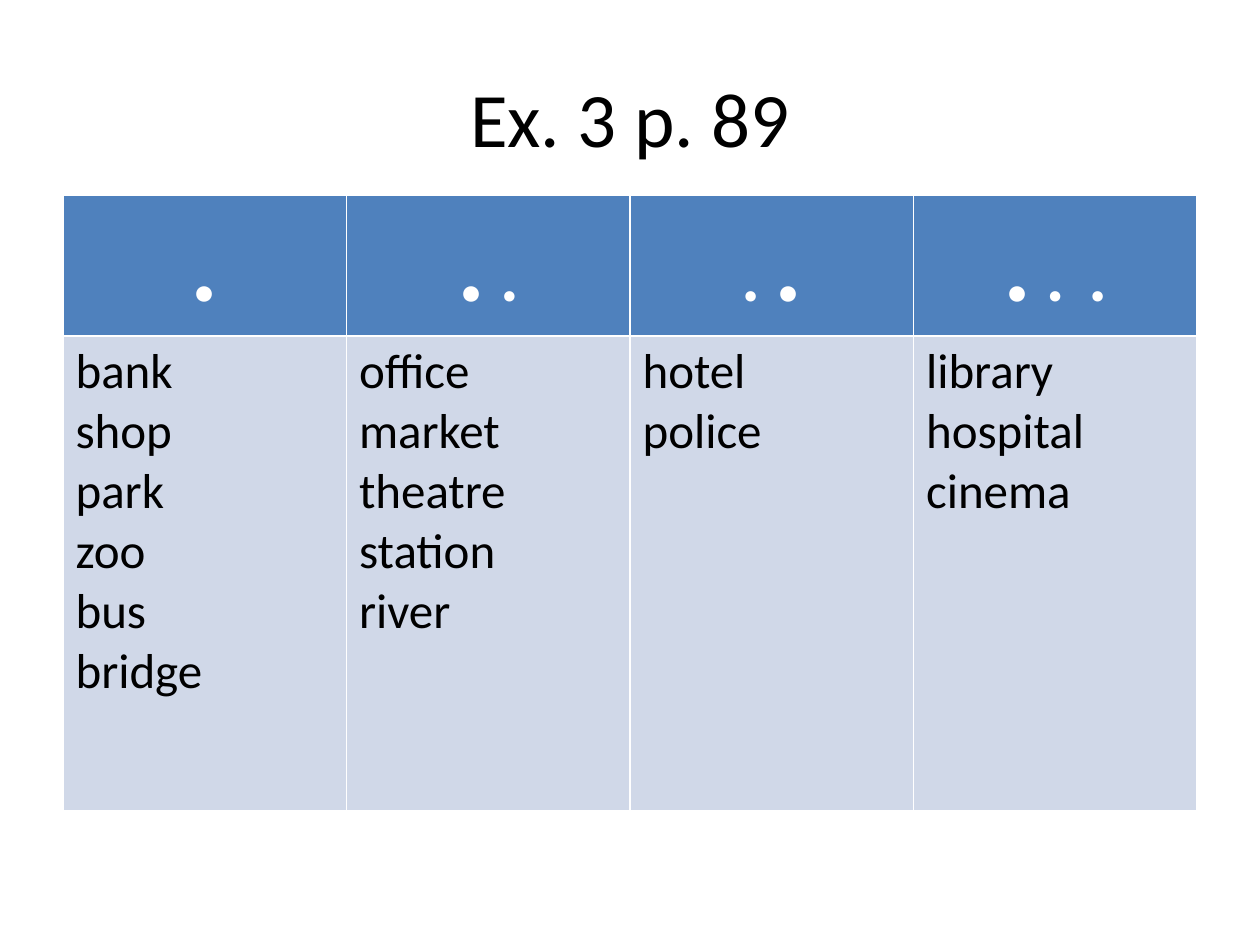
from pptx import Presentation
from pptx.dml.color import RGBColor
from pptx.enum.text import MSO_ANCHOR, PP_ALIGN
from pptx.util import Inches, Pt

FONT = "Calibri"
BLACK, WHITE, BLUE, PALE = "000000", "FFFFFF", "4F81BD", "D0D8E8"
BIG, SMALL, GAP, WIDE_GAP = 60, 40, 36, 60  # stress dots and the spaces between

# Each stress pattern (text, size) with the words that follow it
STRESS_GROUPS = [
    ([(".", BIG)], ["bank", "shop", "park", "zoo", "bus", "bridge"]),
    ([(".", BIG), (" ", GAP), (".", SMALL)],
     ["office", "market", "theatre", "station", "river"]),
    ([(".", SMALL), (" ", GAP), (".", BIG)], ["hotel", "police"]),
    ([(".", BIG), (" ", GAP), (".", SMALL), (" ", WIDE_GAP), (".", SMALL)],
     ["library", "hospital", "cinema"]),
]


def color(hex_value):
    return RGBColor.from_string(hex_value)


def add_run(paragraph, text, size, ink, bold=False):
    run = paragraph.add_run()
    run.text = text
    run.font.name = FONT
    run.font.size = Pt(size)
    run.font.bold = bold
    run.font.color.rgb = color(ink)


def fill_cell(cell, fill, lines, ink, bold=False, align=PP_ALIGN.LEFT):
    """Fill a cell with lines, each a list of (text, size) runs."""
    cell.fill.solid()
    cell.fill.fore_color.rgb = color(fill)
    frame = cell.text_frame
    for index, line in enumerate(lines):
        paragraph = frame.add_paragraph() if index else frame.paragraphs[0]
        paragraph.alignment = align
        for text, size in line:
            add_run(paragraph, text, size, ink, bold)


def place_title(slide, left, top, width, height):
    title = slide.shapes.title
    title.left, title.top, title.width, title.height = left, top, width, height
    title.text_frame.vertical_anchor = MSO_ANCHOR.MIDDLE
    paragraph = title.text_frame.paragraphs[0]
    paragraph.alignment = PP_ALIGN.CENTER
    add_run(paragraph, "Ex. 3 p. 89", 44, BLACK)


def place_stress_table(slide, left, top, width, height):
    # The default table style supplies the white rules between cells
    table = slide.shapes.add_table(
        2, len(STRESS_GROUPS), left, top, width, height).table
    header_height = Inches(1.1)
    table.rows[0].height = header_height
    table.rows[1].height = height - header_height
    for column, (pattern, words) in enumerate(STRESS_GROUPS):
        fill_cell(table.cell(0, column), BLUE, [pattern], WHITE,
                  bold=True, align=PP_ALIGN.CENTER)
        fill_cell(table.cell(1, column), PALE,
                  [[(word, 28)] for word in words], BLACK)


def main():
    deck = Presentation()
    deck.slide_width, deck.slide_height = Inches(10), Inches(7.5)
    slide = deck.slides.add_slide(deck.slide_layouts[5])
    margin = Inches(0.5)
    content_width = deck.slide_width - 2 * margin
    title_top, title_height = Inches(0.3), Inches(1.25)

    # Title above, words sorted by stress below
    place_title(slide, margin, title_top, content_width, title_height)
    place_stress_table(slide, margin, title_top + title_height,
                       content_width, Inches(4.87))
    deck.save("out.pptx")


if __name__ == "__main__":
    main()
